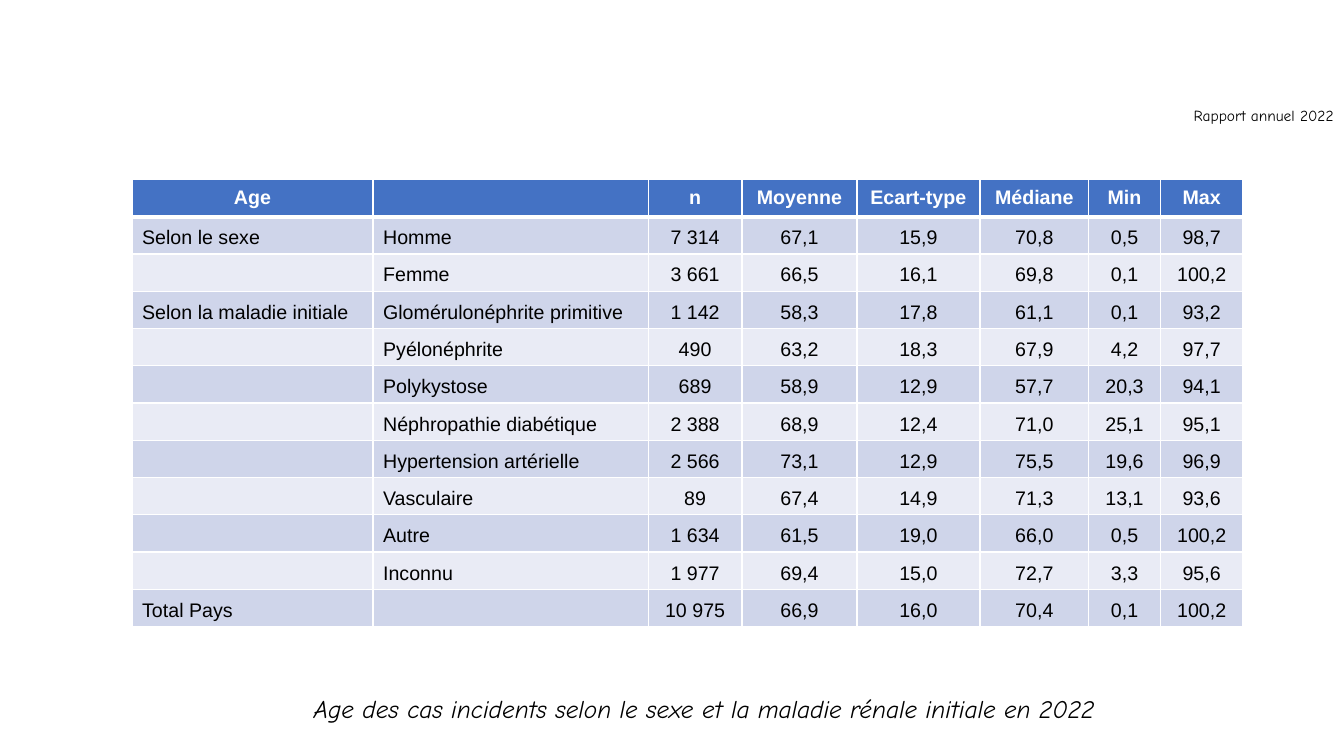
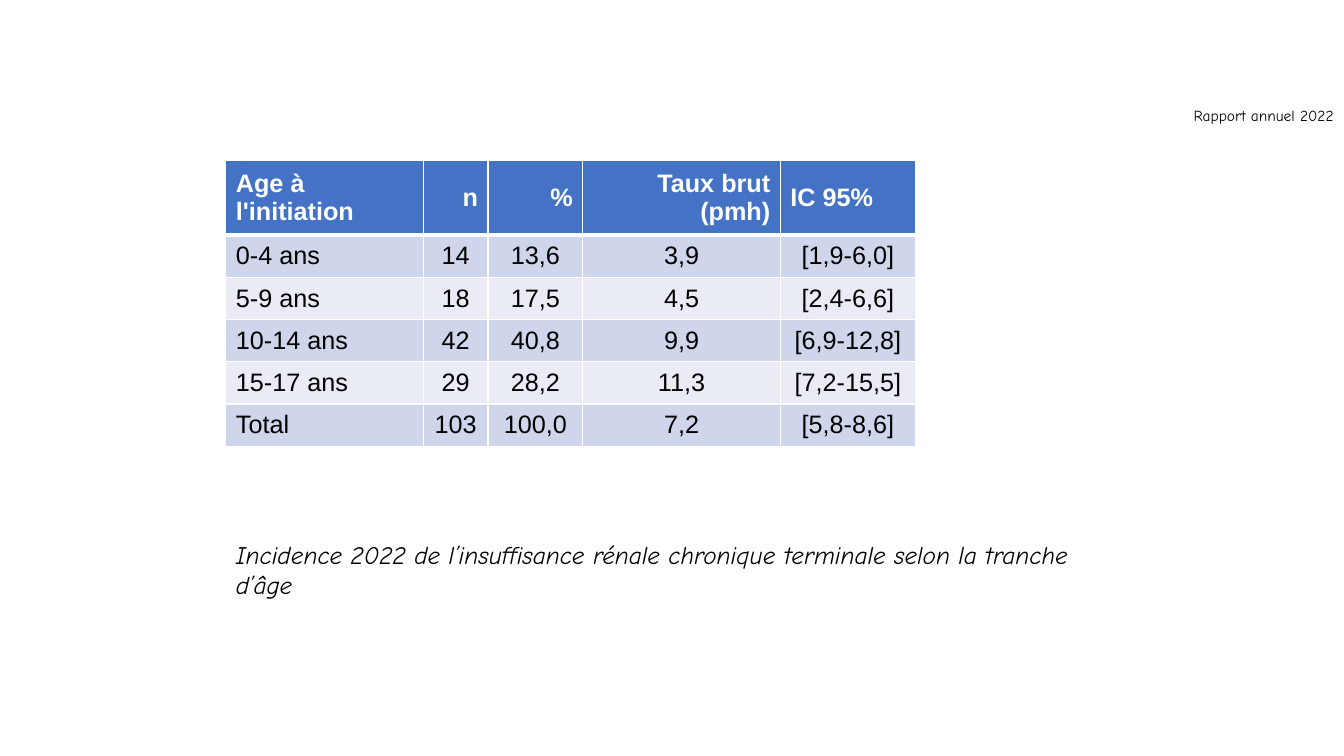
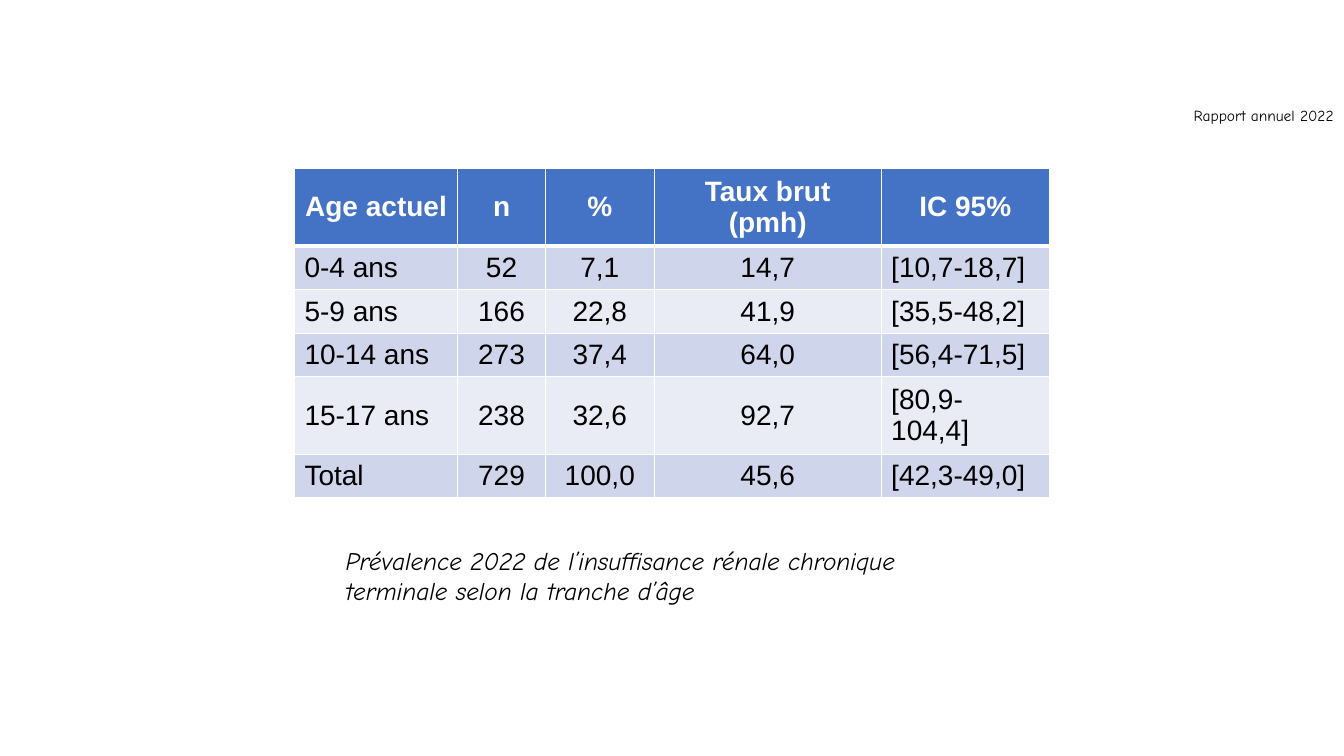
from lxml.etree import SubElement
from pptx import Presentation
from pptx.dml.color import RGBColor
from pptx.enum.text import MSO_ANCHOR as Anchor, PP_ALIGN as Align
from pptx.oxml.ns import qn
from pptx.util import Inches, Pt

# Shared style
COLORS = {"header": "4472C4", "odd": "CFD5EA", "even": "E9EBF5",
          "border": "FFFFFF", "header_text": "FFFFFF", "text": "000000"}
TABLE_FONT, TEXT_FONT = "Arial", "Comic Neue"
ALIGN = {"l": Align.LEFT, "c": Align.CENTER, "r": Align.RIGHT}
REPORT = {"text": "Rapport annuel 2022", "at": (11.74, 1, 1.69, 0.29)}

# Content: one table and one caption per slide; alignments are one letter per column
SLIDES = [
    {
        "at": (1.31, 1.78), "size": 14, "anchor": Anchor.BOTTOM,
        "columns": (2.39, 2.73, 0.93, 1.14, 1.22, 1.08, 0.71, 0.82),
        "header_height": 0.37, "row_height": 0.37,
        "header_align": "cccccccc", "body_align": "llcccccc",
        "rows": [
            ("Age", "", "n", "Moyenne", "Ecart-type", "Médiane", "Min", "Max"),
            ("Selon le sexe", "Homme", "7 314", "67,1", "15,9", "70,8", "0,5", "98,7"),
            ("", "Femme", "3 661", "66,5", "16,1", "69,8", "0,1", "100,2"),
            ("Selon la maladie initiale", "Glomérulonéphrite primitive",
             "1 142", "58,3", "17,8", "61,1", "0,1", "93,2"),
            ("", "Pyélonéphrite", "490", "63,2", "18,3", "67,9", "4,2", "97,7"),
            ("", "Polykystose", "689", "58,9", "12,9", "57,7", "20,3", "94,1"),
            ("", "Néphropathie diabétique", "2 388", "68,9", "12,4", "71,0", "25,1", "95,1"),
            ("", "Hypertension artérielle", "2 566", "73,1", "12,9", "75,5", "19,6", "96,9"),
            ("", "Vasculaire", "89", "67,4", "14,9", "71,3", "13,1", "93,6"),
            ("", "Autre", "1 634", "61,5", "19,0", "66,0", "0,5", "100,2"),
            ("", "Inconnu", "1 977", "69,4", "15,0", "72,7", "3,3", "95,6"),
            ("Total Pays", "", "10 975", "66,9", "16,0", "70,4", "0,1", "100,2"),
        ],
        "caption": "Age des cas incidents selon le sexe et la maladie rénale initiale en 2022",
        "caption_at": (2.81, 6.83, 8.35, 0.5), "caption_align": "c",
    },
    {
        "at": (2.24, 1.59), "size": 18, "anchor": Anchor.MIDDLE,
        "columns": (1.96, 0.64, 0.94, 1.96, 1.34),
        "header_height": 0.74, "row_height": 0.42,
        "header_align": "lrrrl", "body_align": "lcccc",
        "rows": [
            ("Age à l'initiation", "n", "%", "Taux brut (pmh)", "IC 95%"),
            ("0-4 ans", "14", "13,6", "3,9", "[1,9-6,0]"),
            ("5-9 ans", "18", "17,5", "4,5", "[2,4-6,6]"),
            ("10-14 ans", "42", "40,8", "9,9", "[6,9-12,8]"),
            ("15-17 ans", "29", "28,2", "11,3", "[7,2-15,5]"),
            ("Total", "103", "100,0", "7,2", "[5,8-8,6]"),
        ],
        "caption": "Incidence 2022 de l’insuffisance rénale chronique terminale "
                   "selon la tranche d’âge",
        "caption_at": (2.24, 5.3, 8.82, 0.71), "caption_align": "l",
    },
    {
        "at": (2.92, 1.67), "size": 20, "anchor": Anchor.MIDDLE,
        "columns": (1.62, 0.87, 1.08, 2.25, 1.67),
        "header_height": 0.43, "row_height": 0.43,
        "header_align": "ccccc", "body_align": "lcccl",
        "rows": [
            ("Age actuel", "n", "%", "Taux brut (pmh)", "IC 95%"),
            ("0-4 ans", "52", "7,1", "14,7", "[10,7-18,7]"),
            ("5-9 ans", "166", "22,8", "41,9", "[35,5-48,2]"),
            ("10-14 ans", "273", "37,4", "64,0", "[56,4-71,5]"),
            ("15-17 ans", "238", "32,6", "92,7", "[80,9-104,4]"),
            ("Total", "729", "100,0", "45,6", "[42,3-49,0]"),
        ],
        "caption": "Prévalence 2022 de l’insuffisance rénale chronique terminale "
                   "selon la tranche d’âge",
        "caption_at": (3.33, 5.36, 6.67, 0.71), "caption_align": "l",
    },
]


def write(frame, text, *, size, font=TEXT_FONT, color="text", align="l",
          bold=False, italic=False):
    para = frame.paragraphs[0]
    para.alignment = ALIGN[align]
    if not text:  # an empty cell keeps the table's text size
        SubElement(para._p, qn("a:endParaRPr"), sz=str(size * 100))
        return
    span = para.add_run()
    span.text = text
    span.font.name, span.font.size = font, Pt(size)
    span.font.bold, span.font.italic = bold, italic
    span.font.color.rgb = RGBColor.from_string(COLORS[color])


def add_text(page, text, at, *, wrap=True, **style):
    box = page.shapes.add_textbox(*(Inches(value) for value in at))
    box.text_frame.word_wrap = wrap
    write(box.text_frame, text, **style)
    return box


def set_borders(cell, row):
    widths = {"lnL": 1, "lnR": 1, "lnT": 3 if row == 1 else 1, "lnB": 3 if row == 0 else 1}
    properties = cell._tc.get_or_add_tcPr()
    for side, width in widths.items():
        line = SubElement(properties, qn(f"a:{side}"), w=str(Pt(width)))
        fill = SubElement(line, qn("a:solidFill"))
        SubElement(fill, qn("a:srgbClr"), val=COLORS["border"])


def add_data_table(page, data):
    rows, columns = data["rows"], data["columns"]
    heights = [data["header_height"]] + [data["row_height"]] * (len(rows) - 1)
    left, top = data["at"]
    table = page.shapes.add_table(len(rows), len(columns), Inches(left), Inches(top),
                                  Inches(sum(columns)), Inches(sum(heights))).table
    table.horz_banding = False
    for column, width in zip(table.columns, columns):
        column.width = Inches(width)
    for r, (texts, height) in enumerate(zip(rows, heights)):
        table.rows[r].height = Inches(height)
        header = r == 0
        band = "header" if header else "odd" if r % 2 else "even"
        aligns = data["header_align" if header else "body_align"]
        for c, (text, align) in enumerate(zip(texts, aligns)):
            cell = table.cell(r, c)
            set_borders(cell, r)
            cell.fill.solid()
            cell.fill.fore_color.rgb = RGBColor.from_string(COLORS[band])
            cell.vertical_anchor = Anchor.MIDDLE if header else data["anchor"]
            write(cell.text_frame, text, size=data["size"], font=TABLE_FONT, align=align,
                  color="header_text" if header else "text", bold=header)


def main():
    deck = Presentation()
    deck.slide_width, deck.slide_height = Inches(13.33), Inches(7.5)
    layout = deck.slide_layouts[6]
    for holder in list(layout.placeholders):
        holder.element.getparent().remove(holder.element)

    for number, data in enumerate(SLIDES):
        page = deck.slides.add_slide(layout)
        if number == 0:  # the report label moves to the layout, shared by all slides
            label = add_text(page, REPORT["text"], REPORT["at"], wrap=False, size=11)
            layout.shapes.element.append(label.element)
        add_data_table(page, data)
        add_text(page, data["caption"], data["caption_at"], size=18, italic=True,
                 align=data["caption_align"])

    deck.save("out.pptx")


if __name__ == "__main__":
    main()
